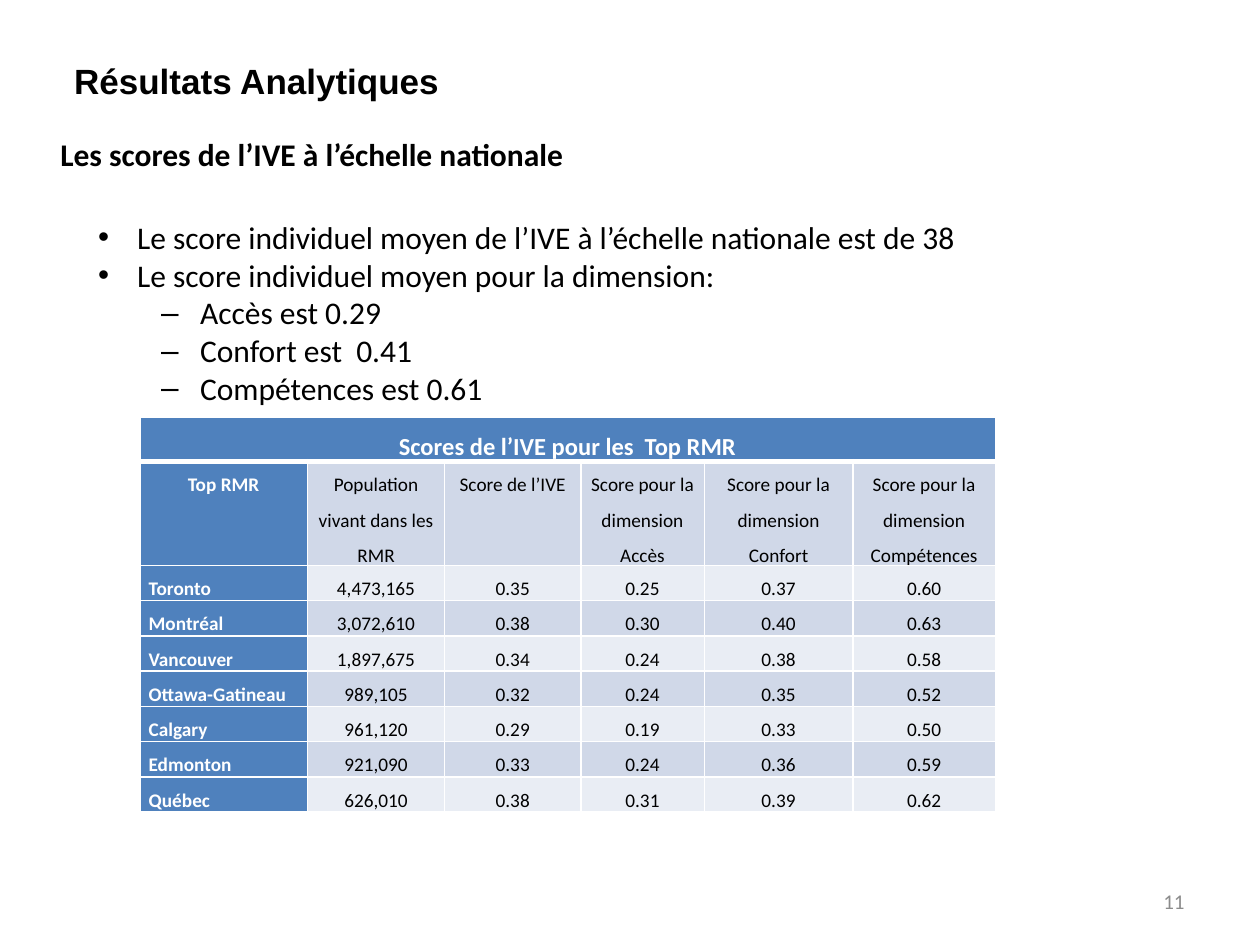
import dataclasses

import lxml.etree
import pptx
import pptx.dml.color
import pptx.enum.text
import pptx.oxml.ns
import pptx.util

Inches = pptx.util.Inches
Align = pptx.enum.text.PP_ALIGN
Anchor = pptx.enum.text.MSO_ANCHOR
AutoSize = pptx.enum.text.MSO_AUTO_SIZE


@dataclasses.dataclass(frozen=True)
class Theme:
    body_font: str = "Calibri"
    title_font: str = "Arial"
    black: str = "000000"
    white: str = "FFFFFF"
    gray: str = "8C8C8C"
    blue: str = "4F81BD"
    bands: tuple = ("D0D8E8", "E9EDF4")
    title_size: int = 20
    body_size: int = 18
    table_title_size: int = 14
    number_size: int = 12
    table_size: int = 11
    thin_border: int = 1
    thick_border: int = 3


class SlideBuilder:
    def __init__(self, slide, theme):
        self.slide = slide
        self.theme = theme

    def add_run(self, paragraph, text, size, color, bold=False, font=None):
        run = paragraph.add_run()
        run.text = text
        run.font.name = font or self.theme.body_font
        run.font.size = pptx.util.Pt(size)
        run.font.bold = bold
        run.font.color.rgb = pptx.dml.color.RGBColor.from_string(color)

    def add_box(self, left, top, width, height, anchor=Anchor.TOP,
                auto_size=AutoSize.SHAPE_TO_FIT_TEXT):
        shape = self.slide.shapes.add_textbox(
            Inches(left), Inches(top), Inches(width), Inches(height))
        frame = shape.text_frame
        frame.word_wrap = True
        frame.auto_size = auto_size
        frame.vertical_anchor = anchor
        return frame

    def add_heading(self, text, position, size, font):
        paragraph = self.add_box(*position).paragraphs[0]
        self.add_run(paragraph, text, size, self.theme.black, True, font)

    def add_slide_number(self, text, position):
        frame = self.add_box(*position, Anchor.MIDDLE, AutoSize.NONE)
        paragraph = frame.paragraphs[0]
        paragraph.alignment = Align.RIGHT
        self.add_run(paragraph, text, self.theme.number_size, self.theme.gray)

    def add_bullets(self, items, position):
        frame = self.add_box(*position)
        for index, (level, text) in enumerate(items):
            paragraph = frame.add_paragraph() if index else frame.paragraphs[0]
            paragraph.level = level
            properties = paragraph._p.get_or_add_pPr()
            properties.set("marL", str(Inches(0.31 + 0.5 * level)))
            properties.set("indent", str(-Inches(0.31)))
            font = lxml.etree.SubElement(properties, pptx.oxml.ns.qn("a:buFont"))
            font.set("typeface", self.theme.title_font)
            bullet = lxml.etree.SubElement(properties, pptx.oxml.ns.qn("a:buChar"))
            bullet.set("char", "•‒"[level])
            self.add_run(paragraph, text, self.theme.body_size, self.theme.black)

    def set_borders(self, cell, row):
        properties = cell._tc.get_or_add_tcPr()
        thick_side = {0: "lnB", 1: "lnT"}.get(row)
        for side in ("lnL", "lnR", "lnT", "lnB"):
            width = self.theme.thick_border if side == thick_side else self.theme.thin_border
            line = lxml.etree.SubElement(properties, pptx.oxml.ns.qn("a:" + side))
            line.set("w", str(pptx.util.Pt(width)))
            fill = lxml.etree.SubElement(line, pptx.oxml.ns.qn("a:solidFill"))
            color = lxml.etree.SubElement(fill, pptx.oxml.ns.qn("a:srgbClr"))
            color.set("val", self.theme.white)

    def style_cell(self, cell, row, column):
        self.set_borders(cell, row)
        is_header = row == 0 or column == 0
        color = self.theme.blue if is_header else self.theme.bands[(row + 1) % 2]
        cell.fill.solid()
        cell.fill.fore_color.rgb = pptx.dml.color.RGBColor.from_string(color)
        cell.margin_left = cell.margin_right = Inches(0.07)
        cell.margin_top = cell.margin_bottom = 0
        cell.vertical_anchor = Anchor.TOP if row < 2 else Anchor.BOTTOM

    def fill_cell(self, cell, text, row, column):
        is_header = row == 0 or column == 0
        paragraph = cell.text_frame.paragraphs[0]
        paragraph.line_spacing = 1.5
        paragraph.alignment = Align.LEFT if row > 1 and column == 0 else Align.CENTER
        self.add_run(paragraph, text,
                     self.theme.table_title_size if row == 0 else self.theme.table_size,
                     self.theme.white if is_header else self.theme.black, is_header)

    def add_score_table(self, title, rows, left, top, widths, heights):
        table = self.slide.shapes.add_table(
            len(heights), len(widths), Inches(left), Inches(top),
            Inches(sum(widths)), Inches(sum(heights))).table
        for column, width in zip(table.columns, widths):
            column.width = Inches(width)
        for row, height in zip(table.rows, heights):
            row.height = Inches(height)
        for row in range(len(heights)):
            for column in range(len(widths)):
                self.style_cell(table.cell(row, column), row, column)
        table.cell(0, 0).merge(table.cell(0, len(widths) - 1))
        self.fill_cell(table.cell(0, 0), title, 0, 0)
        for row, values in enumerate(rows, 1):
            for column, text in enumerate(values):
                self.fill_cell(table.cell(row, column), text, row, column)


BULLETS = [
    (0, "Le score individuel moyen de l’IVE à l’échelle nationale est de 38"),
    (0, "Le score individuel moyen pour la dimension:"),
    (1, "Accès est 0.29"),
    (1, "Confort est  0.41"),
    (1, "Compétences est 0.61"),
]

SCORES = [
    ("Top RMR", "Population vivant dans les RMR", "Score de l’IVE",
     "Score pour la dimension Accès", "Score pour la dimension Confort",
     "Score pour la dimension Compétences"),
    ("Toronto", "4,473,165", "0.35", "0.25", "0.37", "0.60"),
    ("Montréal", "3,072,610", "0.38", "0.30", "0.40", "0.63"),
    ("Vancouver", "1,897,675", "0.34", "0.24", "0.38", "0.58"),
    ("Ottawa-Gatineau", "989,105", "0.32", "0.24", "0.35", "0.52"),
    ("Calgary", "961,120", "0.29", "0.19", "0.33", "0.50"),
    ("Edmonton", "921,090", "0.33", "0.24", "0.36", "0.59"),
    ("Québec", "626,010", "0.38", "0.31", "0.39", "0.62"),
]


def main():
    presentation = pptx.Presentation()
    presentation.slide_width = Inches(10)
    presentation.slide_height = Inches(7.5)
    theme = Theme()
    slide = presentation.slides.add_slide(presentation.slide_layouts[6])
    builder = SlideBuilder(slide, theme)

    builder.add_slide_number("11", (7.17, 6.95, 2.33, 0.4))
    builder.add_heading("Les scores de l’IVE à l’échelle nationale",
                        (0.38, 1.02, 9.25, 0.4), theme.body_size, theme.body_font)
    builder.add_heading("Résultats Analytiques",
                        (0.49, 0.42, 8.9, 0.77), theme.title_size, theme.title_font)
    builder.add_bullets(BULLETS, (0.68, 1.68, 8.23, 1.62))
    builder.add_score_table(
        "Scores de l’IVE pour les  Top RMR", SCORES, 1.11, 3.31,
        widths=[1.33, 1.09, 1.08, 0.98, 1.18, 1.13],
        heights=[0.33, 0.82] + [0.28] * 7)

    presentation.save("out.pptx")


if __name__ == "__main__":
    main()
